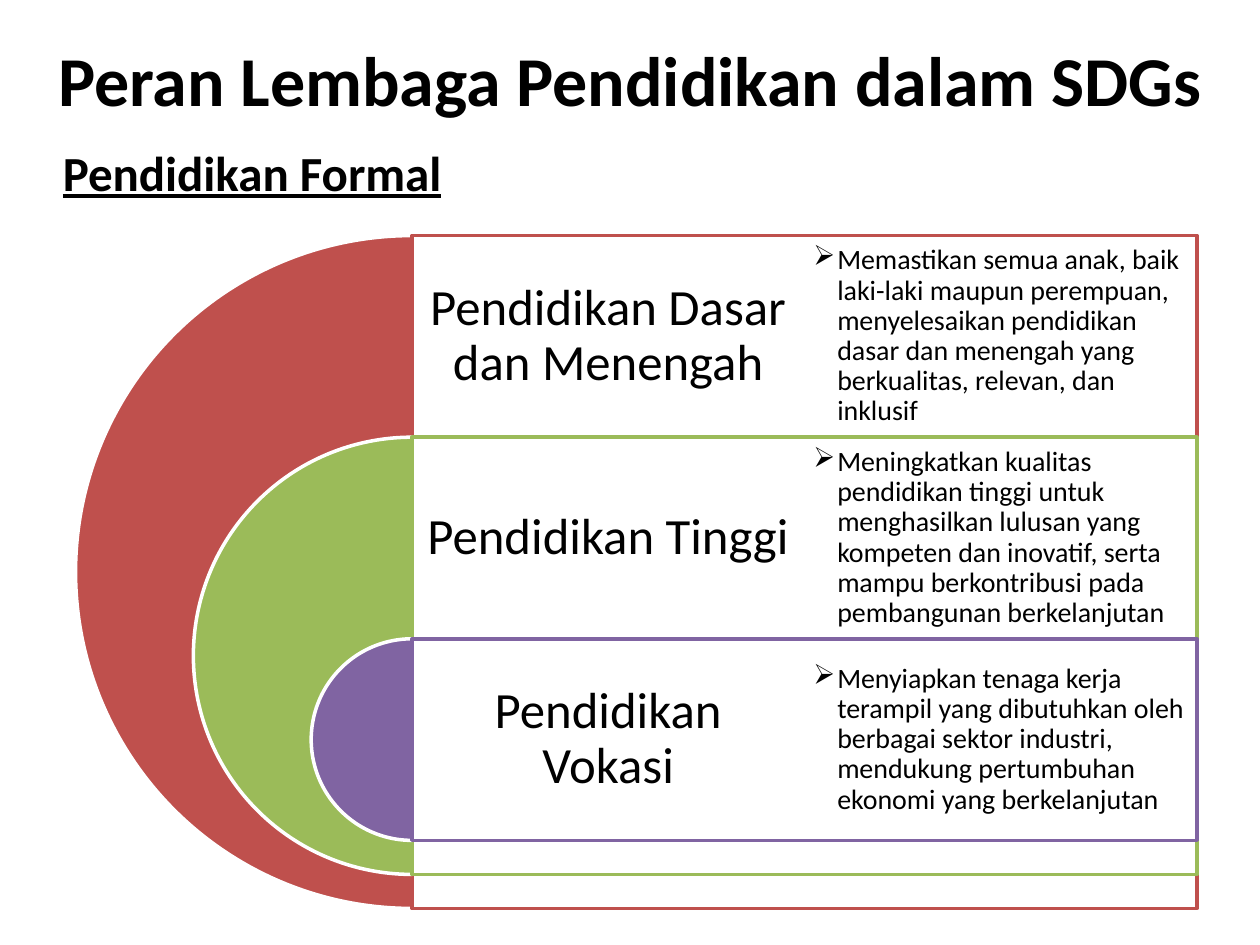
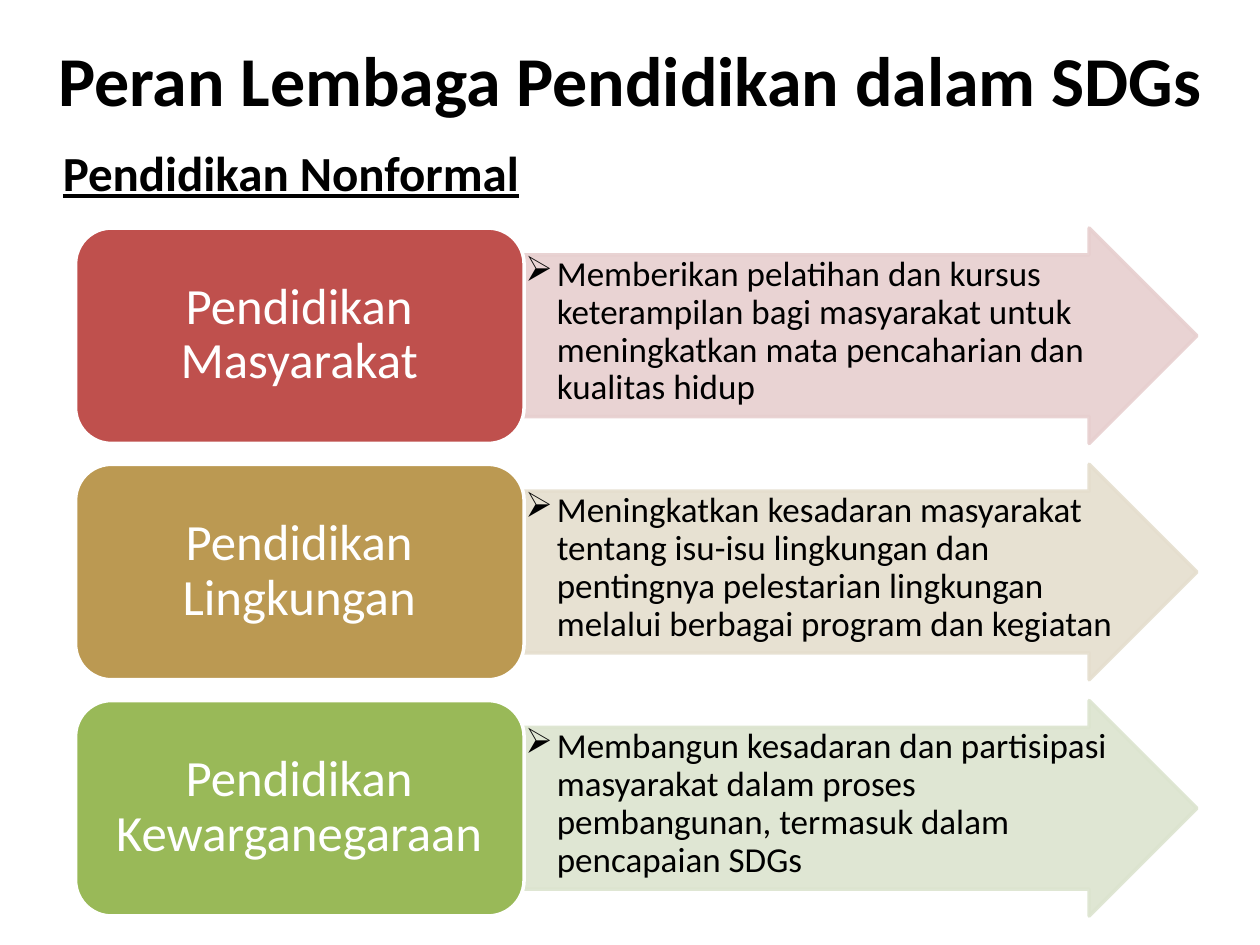
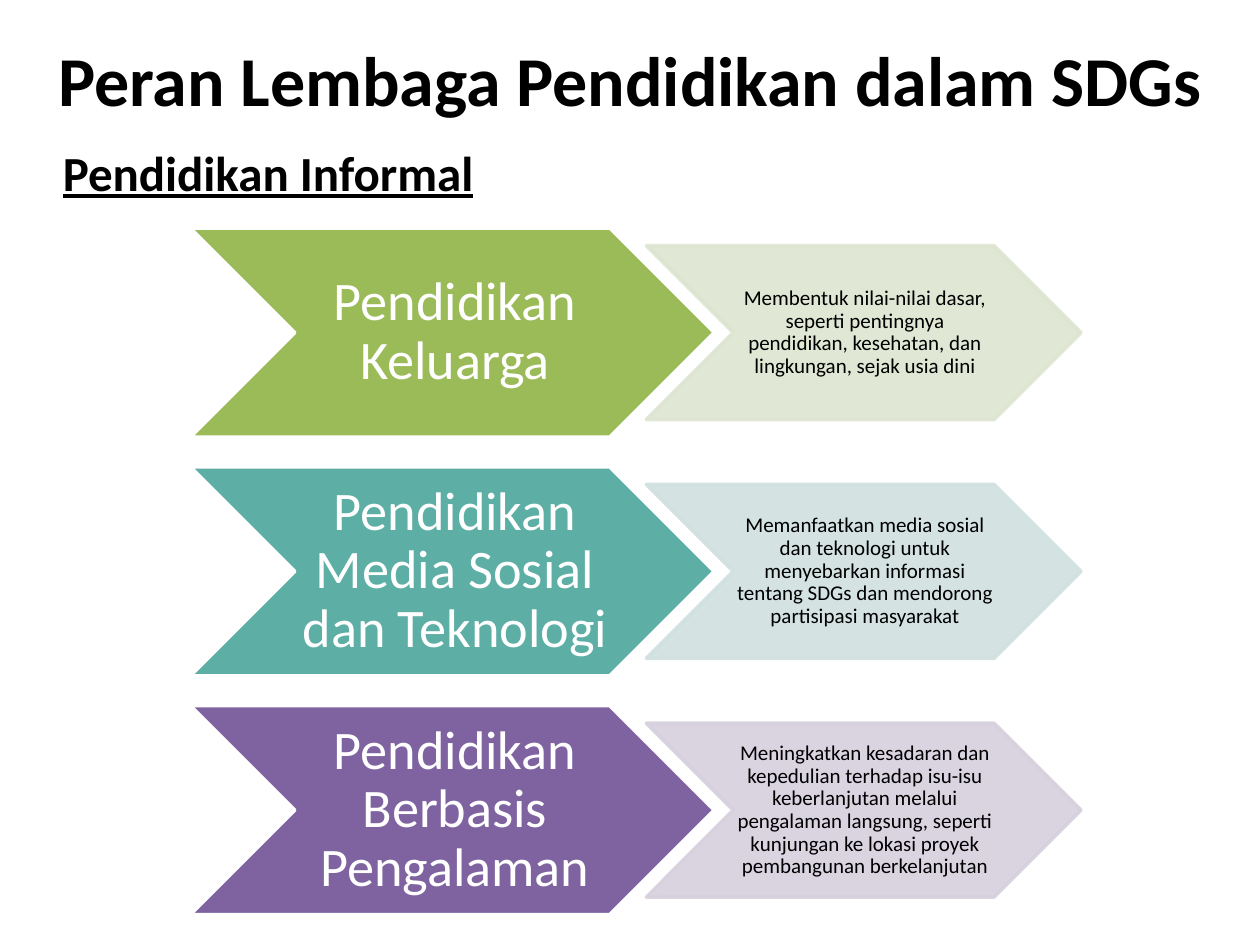
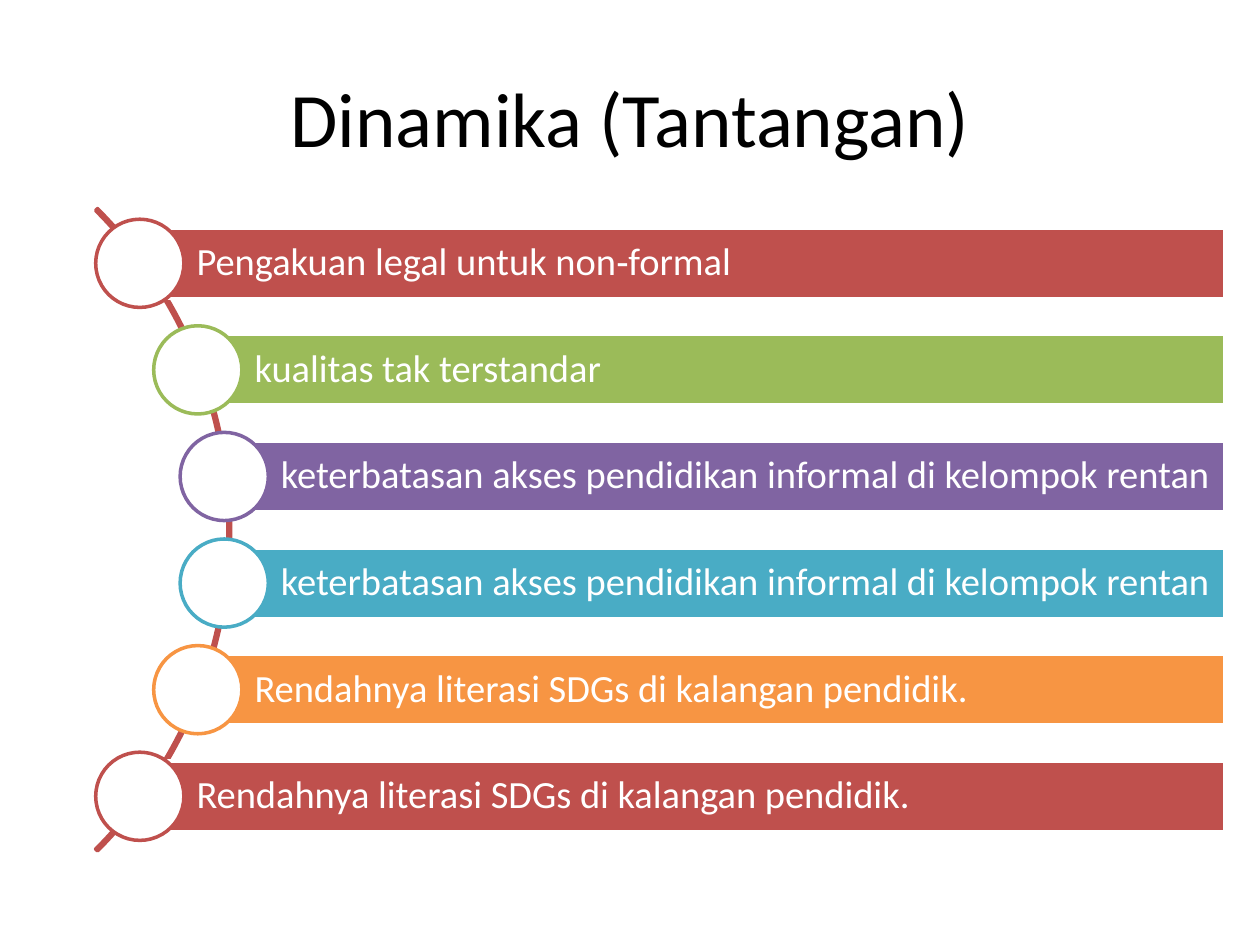
from lxml import etree
from pptx import Presentation
from pptx.dml.color import RGBColor
from pptx.enum import shapes, text
from pptx.oxml.ns import qn
from pptx.util import Inches, Pt

SHAPE = shapes.MSO_SHAPE
LEFT, CENTER = text.PP_ALIGN.LEFT, text.PP_ALIGN.CENTER
TOP, MIDDLE = text.MSO_ANCHOR.TOP, text.MSO_ANCHOR.MIDDLE

BLACK = RGBColor(0x00, 0x00, 0x00)
WHITE = RGBColor(0xFF, 0xFF, 0xFF)
RED = RGBColor(0xBF, 0x50, 0x4D)
GREEN = RGBColor(0x9B, 0xBB, 0x59)
PURPLE = RGBColor(0x80, 0x64, 0xA2)
BLUE = RGBColor(0x49, 0xAC, 0xC5)
ORANGE = RGBColor(0xF7, 0x95, 0x43)
GOLD = RGBColor(0xBB, 0x99, 0x52)
LEAF = RGBColor(0x99, 0xB9, 0x58)
TEAL = RGBColor(0x5D, 0xAE, 0xA5)
VIOLET = RGBColor(0x7F, 0x63, 0xA1)
PALE_RED = RGBColor(0xE7, 0xCF, 0xCF)
PALE_GOLD = RGBColor(0xE5, 0xDE, 0xCE)
PALE_LEAF = RGBColor(0xDC, 0xE4, 0xCF)
PALE_GREEN = RGBColor(0xDD, 0xE5, 0xD0)
PALE_TEAL = RGBColor(0xD0, 0xE1, 0xDF)
PALE_VIOLET = RGBColor(0xD6, 0xD0, 0xDE)

ROLE_TITLE = "Peran Lembaga Pendidikan dalam SDGs"


class Deck:
    """Holds the shared style and the slide being filled."""

    font = "Calibri"
    line_width = Pt(2)
    bullet_font, bullet = "Wingdings", "Ø"  # this letter is an arrowhead in Wingdings

    def __init__(self):
        self.prs = Presentation()
        self.prs.slide_width, self.prs.slide_height = Inches(10), Inches(7.5)
        self.s = None

    def new_slide(self):
        self.s = self.prs.slides.add_slide(self.prs.slide_layouts[6])

    def role_slide(self, subtitle):
        """Start a slide with the shared title and an underlined subtitle."""
        self.new_slide()
        self.text((0.29, 0, 9.42, 1.25), ROLE_TITLE, 40, bold=True, spacing=1)
        self.text((0.4, 1.08, 7.59, 0.73), subtitle, 28, align=LEFT, anchor=TOP,
                  bold=True, underline=True, spacing=1)

    def shape(self, kind, box, fill=None, line=WHITE, adj=(), opacity=None):
        """Opacity, in percent, applies wherever the fill colour is used."""
        sp = self.s.shapes.add_shape(kind, *map(Inches, box))
        sp.shadow.inherit = False
        for i, value in enumerate(adj):
            sp.adjustments[i] = value
        if fill is None:
            sp.fill.background()
        else:
            sp.fill.solid()
            sp.fill.fore_color.rgb = fill
        sp.line.color.rgb = line
        sp.line.width = self.line_width
        if opacity:
            for color in sp.element.spPr.iter(qn("a:srgbClr")):
                if color.get("val") == str(fill):
                    etree.SubElement(color, qn("a:alpha"), val=str(opacity * 1000))

    def text(self, box, words, size, color=BLACK, align=CENTER, anchor=MIDDLE,
             insets=(0.1, 0.05, 0.1, 0.05), spacing=0.9, bold=False,
             underline=False, indent=0):
        """A non-zero indent makes the paragraph a bulleted one."""
        tf = self.s.shapes.add_textbox(*map(Inches, box)).text_frame
        tf.word_wrap = True
        tf.vertical_anchor = anchor
        (tf.margin_left, tf.margin_top,
         tf.margin_right, tf.margin_bottom) = map(Inches, insets)
        p = tf.paragraphs[0]
        p.alignment = align
        p.line_spacing = spacing
        r = p.add_run()
        r.text = words
        r.font.name, r.font.size = self.font, Pt(size)
        r.font.color.rgb = color
        r.font.bold, r.font.underline = bold, underline
        if indent:
            self.add_bullet(p, indent)

    def add_bullet(self, p, indent):
        p.level = 1
        pPr = p._p.get_or_add_pPr()
        pPr.set("marL", str(Inches(indent)))
        pPr.set("indent", str(-Inches(indent)))
        color = etree.SubElement(pPr, qn("a:buClr"))
        etree.SubElement(color, qn("a:srgbClr"), val=str(BLACK))
        etree.SubElement(pPr, qn("a:buFont"), typeface=self.bullet_font,
                         pitchFamily="2", charset="2")
        etree.SubElement(pPr, qn("a:buChar"), char=self.bullet)


def formal_slide(deck):
    deck.role_slide("Pendidikan Formal")
    center, top, row, width, shrink = 3.27, 1.87, 1.6, 6.23, 1.87
    levels = [
        (RED, "Pendidikan Dasar dan Menengah",
         "Memastikan semua anak, baik laki-laki maupun perempuan, menyelesaikan "
         "pendidikan dasar dan menengah yang berkualitas, relevan, dan inklusif"),
        (GREEN, "Pendidikan Tinggi",
         "Meningkatkan kualitas pendidikan tinggi untuk menghasilkan lulusan yang "
         "kompeten dan inovatif, serta mampu berkontribusi pada pembangunan "
         "berkelanjutan"),
        (PURPLE, "Pendidikan Vokasi",
         "Menyiapkan tenaga kerja terampil yang dibutuhkan oleh berbagai sektor "
         "industri, mendukung pertumbuhan ekonomi yang berkelanjutan"),
    ]
    for i, (color, name, role) in enumerate(levels):
        y, size = top + i * row, 5.34 - i * shrink
        deck.shape(SHAPE.PIE, (center - size / 2, y, size, size), color, adj=(54, 162))
        deck.shape(SHAPE.RECTANGLE, (center, y, width, size), WHITE, color, opacity=90)
        deck.text((center, y, width / 2, row), name, 29, insets=(0.12,) * 4)
        deck.text((center + width / 2, y, width / 2, row), role, 16, align=LEFT,
                  insets=(0.07,) * 4, indent=0.19)


def nonformal_slide(deck):
    deck.role_slide("Pendidikan Nonformal")
    left, split, top, last_top, height = 0.6, 4.16, 1.81, 5.56, 1.71
    programs = [
        (RED, PALE_RED, "Pendidikan Masyarakat",
         "Memberikan pelatihan dan kursus keterampilan bagi masyarakat untuk "
         "meningkatkan mata pencaharian dan kualitas hidup"),
        (GOLD, PALE_GOLD, "Pendidikan Lingkungan",
         "Meningkatkan kesadaran masyarakat tentang isu-isu lingkungan dan "
         "pentingnya pelestarian lingkungan melalui berbagai program dan kegiatan"),
        (LEAF, PALE_LEAF, "Pendidikan Kewarganegaraan",
         "Membangun kesadaran dan partisipasi masyarakat dalam proses "
         "pembangunan, termasuk dalam pencapaian SDGs"),
    ]
    step = (last_top - top) / (len(programs) - 1)
    for i, (color, pale, name, role) in enumerate(programs):
        y = top + i * step
        deck.shape(SHAPE.RIGHT_ARROW, (split, y, 5.34, height), pale, pale,
                   adj=(0.75, 0.5), opacity=90)
        deck.text((split, y + height / 8, 4.7, height * 0.75), role, 20, align=LEFT,
                  anchor=TOP, insets=(0.01,) * 4, indent=0.25)
        deck.shape(SHAPE.ROUNDED_RECTANGLE, (left, y, split - left, height), color,
                   adj=(1 / 6,))
        deck.text((left + 0.08, y + 0.08, 3.39, 1.54), name, 29, WHITE,
                  insets=(0.12, 0.06, 0.12, 0.06))


def informal_slide(deck):
    deck.role_slide("Pendidikan Informal")
    top, last_top, big, small = 1.81, 5.6, 1.66, 1.38
    settings = [
        (GREEN, PALE_GREEN, "Pendidikan Keluarga",
         "Membentuk nilai-nilai dasar, seperti pentingnya pendidikan, kesehatan, "
         "dan lingkungan, sejak usia dini"),
        (TEAL, PALE_TEAL, "Pendidikan Media Sosial dan Teknologi",
         "Memanfaatkan media sosial dan teknologi untuk menyebarkan informasi "
         "tentang SDGs dan mendorong partisipasi masyarakat"),
        (VIOLET, PALE_VIOLET, "Pendidikan Berbasis Pengalaman",
         "Meningkatkan kesadaran dan kepedulian terhadap isu-isu keberlanjutan "
         "melalui pengalaman langsung, seperti kunjungan ke lokasi proyek "
         "pembangunan berkelanjutan"),
    ]
    step = (last_top - top) / (len(settings) - 1)
    for i, (color, pale, name, role) in enumerate(settings):
        y = top + i * step
        small_y = y + (big - small) / 2
        deck.shape(SHAPE.CHEVRON, (1.51, y, 4.16, big), color, adj=(0.5,))
        deck.text((2.34, y, 2.5, big), name, 31, WHITE, insets=(0.04, 0.02, 0, 0.02))
        deck.shape(SHAPE.CHEVRON, (5.13, small_y, 3.45, small), pale, pale,
                   adj=(0.5,), opacity=90)
        deck.text((5.82, small_y, 2.07, small), role, 12, insets=(0.02, 0.01, 0, 0.01))


def challenges_slide(deck):
    deck.new_slide()
    deck.text((0.5, 0.3, 9, 1.25), "Dinamika (Tantangan)", 44, spacing=1)
    deck.shape(SHAPE.BLOCK_ARC, (-5.38, 0.6, 7.21, 7.21), line=RED,
               adj=(189, 27, 0.003))
    top, last_top, height, right, circle = 1.81, 6.04, 0.56, 9.72, 0.7
    access = "keterbatasan akses pendidikan informal di kelompok rentan"
    literacy = "Rendahnya literasi SDGs di kalangan pendidik."
    challenges = [
        (1.11, RED, "Pengakuan legal untuk non‑formal"),
        (1.57, GREEN, "kualitas tak terstandar"),
        (1.78, PURPLE, access),
        (1.78, BLUE, access),
        (1.57, ORANGE, literacy),
        (1.11, RED, literacy),
    ]
    step = (last_top - top) / (len(challenges) - 1)
    for i, (x, color, words) in enumerate(challenges):
        y = top + i * step
        bar = (x, y, right - x, height)
        deck.shape(SHAPE.RECTANGLE, bar, color)
        deck.text(bar, words, 22, WHITE, LEFT, insets=(0.45, 0.06, 0.06, 0.06))
        deck.shape(SHAPE.OVAL, (x - circle / 2, y + (height - circle) / 2, circle, circle),
                   WHITE, color)


def main():
    deck = Deck()
    formal_slide(deck)
    nonformal_slide(deck)
    informal_slide(deck)
    challenges_slide(deck)
    deck.prs.save("out.pptx")


if __name__ == "__main__":
    main()
